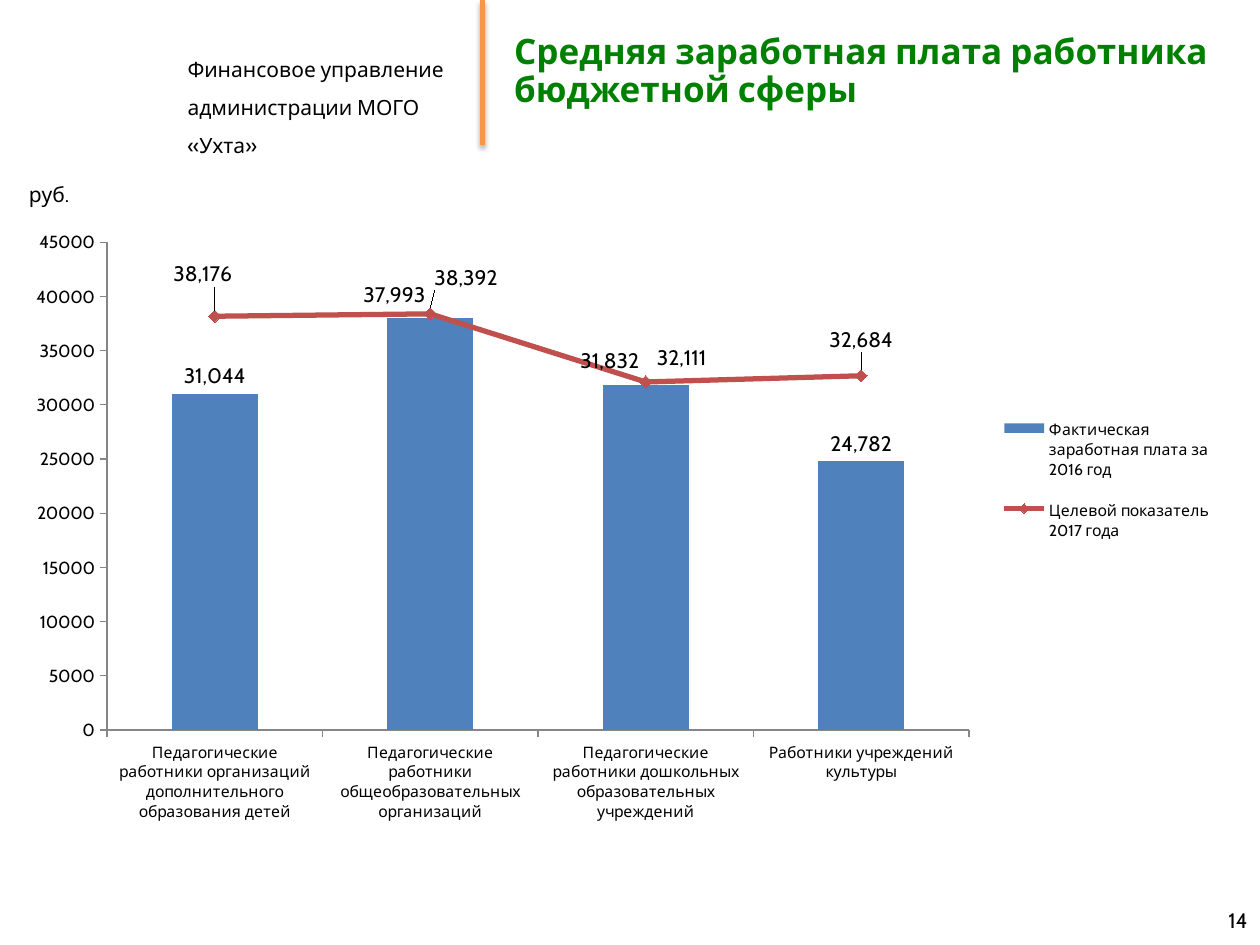
from lxml import etree
from pptx import Presentation
from pptx.chart.data import CategoryChartData as Data
from pptx.dml.color import RGBColor as RGB
from pptx.enum.chart import XL_CHART_TYPE as Kind, XL_LABEL_POSITION as Pos
from pptx.enum.chart import XL_LEGEND_POSITION as Side, XL_MARKER_STYLE as Mark
from pptx.enum.chart import XL_TICK_MARK as Tick
from pptx.enum.shapes import MSO_CONNECTOR as Link
from pptx.enum.text import MSO_ANCHOR as Anchor, MSO_AUTO_SIZE as Auto, PP_ALIGN as Align
from pptx.oxml import parse_xml
from pptx.oxml.ns import nsdecls, qn
from pptx.util import Inches, Pt

FONT = "Cabin"
BLACK = RGB(0, 0, 0)
GREEN = RGB(0, 128, 0)
ORANGE = RGB(0xF7, 0x96, 0x46)
BLUE = RGB(0x4F, 0x81, 0xBD)
RED = RGB(0xC0, 0x50, 0x4D)
GRAY = RGB(0x86, 0x86, 0x86)

CATS = [
    "Педагогические работники организаций дополнительного образования детей",
    "Педагогические работники общеобразовательных организаций",
    "Педагогические работники дошкольных образовательных учреждений",
    "Работники учреждений культуры",
]
FACT = ("Фактическая заработная плата за 2016 год", [31044, 37993, 31832, 24782])
GOAL = ("Целевой показатель 2017 года", [38176, 38392, 32111, 32684])
FACT_MOVES = {1: (-0.03, -0.01), 2: (-0.03, -0.01)}
GOAL_MOVES = {0: (-0.01, -0.03), 1: (0.03, -0.02), 2: (0.03, 0), 3: (0, -0.02)}


def style(font, size, color=BLACK, bold=False):
    font.name = FONT
    font.size = Pt(size)
    font.bold = bold
    font.color.rgb = color


def add_text(slide, box, lines, space=None, align=Align.LEFT, anchor=Anchor.TOP, wrap=True):
    frame = slide.shapes.add_textbox(*map(Inches, box)).text_frame
    frame.word_wrap = wrap
    frame.vertical_anchor = anchor
    for i, line in enumerate(lines):
        para = frame.add_paragraph() if i else frame.paragraphs[0]
        para.alignment = align
        para.line_spacing = space
        run = para.add_run()
        run.text = line
        style(run.font, 12)


def add_title(slide, box):
    title = slide.shapes.title
    title.left, title.top, title.width, title.height = map(Inches, box)
    frame = title.text_frame
    frame.word_wrap = True
    frame.auto_size = Auto.NONE
    frame.vertical_anchor = Anchor.MIDDLE
    para = frame.paragraphs[0]
    para.alignment = Align.LEFT
    para.line_spacing = 0.9
    run = para.add_run()
    run.text = "Средняя заработная плата работника бюджетной сферы"
    style(run.font, 20, GREEN, True)


def add_rule(slide, x, top, end):
    rule = slide.shapes.add_connector(Link.STRAIGHT, *map(Inches, (x, top, x, end)))
    rule.line.color.rgb = ORANGE
    rule.line.width = Pt(3)
    rule._element.spPr.append(parse_xml(
        f'<a:effectLst {nsdecls("a")}><a:outerShdw blurRad="{Pt(3.1)}" dist="{Pt(1.8)}" '
        'dir="5400000" rotWithShape="0"><a:srgbClr val="000000"><a:alpha val="35000"/>'
        '</a:srgbClr></a:outerShdw></a:effectLst>'))


def make_layout(x, y, size=None, inner=False):
    layout = etree.Element(qn("c:layout"))
    manual = etree.SubElement(layout, qn("c:manualLayout"))
    parts = [("layoutTarget", "inner")] if inner else []
    if size:
        parts += [("xMode", "edge"), ("yMode", "edge")]
    parts += [("x", x), ("y", y)]
    if size:
        parts += zip("wh", size)
    for name, val in parts:
        etree.SubElement(manual, qn("c:" + name)).set("val", str(val))
    return layout


def drop(node, tag):
    for old in node.findall(qn(tag)):
        node.remove(old)


def set_layout(node, after, layout):
    drop(node, "c:layout")
    if after is None:
        node.insert(0, layout)
    else:
        after.addnext(layout)


def split_line(chart):
    bars = chart.plots[0]._element
    line = parse_xml(
        f'<c:lineChart {nsdecls("c")}><c:grouping val="standard"/>'
        '<c:varyColors val="0"/><c:marker val="1"/></c:lineChart>')
    ser = bars.findall(qn("c:ser"))[1]
    drop(ser, "c:invertIfNegative")
    line.insert(2, ser)
    for axis in bars.findall(qn("c:axId")):
        etree.SubElement(line, qn("c:axId")).set("val", axis.get("val"))
    bars.addnext(line)


def label_series(series, place, moves):
    labels = series.data_labels
    labels.show_value = True
    labels.number_format = "#,##0"
    labels.number_format_is_linked = False
    labels.position = place
    style(labels.font, 12)
    for i, (x, y) in moves.items():
        label = series.points[i].data_label
        label.position = place
        style(label.font, 12)
        node = labels._element.findall(qn("c:dLbl"))[list(moves).index(i)]
        layout = make_layout(x, y)
        set_layout(node, node.find(qn("c:idx")), layout)
        layout.addnext(parse_xml(
            f'<c:numFmt {nsdecls("c")} formatCode="#,##0" sourceLinked="0"/>'))


def add_pay(slide, box):
    data = Data(number_format="General")
    data.categories = CATS
    data.add_series(*FACT)
    data.add_series(*GOAL)
    chart = slide.shapes.add_chart(
        Kind.COLUMN_CLUSTERED, *map(Inches, box), data).chart
    style(chart.font, 18)
    chart.has_title = False
    split_line(chart)
    bars, line = chart.plots
    bars.gap_width = 150
    bars.vary_by_categories = False
    fact, goal = bars.series[0], line.series[0]
    fact.format.fill.solid()
    fact.format.fill.fore_color.rgb = BLUE
    goal.smooth = False
    goal.format.line.color.rgb = RED
    goal.format.line.width = Pt(3)
    goal.marker.style = Mark.DIAMOND
    goal.marker.size = 7
    goal.marker.format.fill.solid()
    goal.marker.format.fill.fore_color.rgb = RED
    goal.marker.format.line.color.rgb = RED
    label_series(fact, Pos.OUTSIDE_END, FACT_MOVES)
    label_series(goal, Pos.ABOVE, GOAL_MOVES)
    for axis, size in ((chart.category_axis, 9), (chart.value_axis, 10)):
        axis.has_major_gridlines = False
        axis.major_tick_mark = Tick.OUTSIDE
        axis.minor_tick_mark = Tick.NONE
        axis.format.line.color.rgb = GRAY
        style(axis.tick_labels.font, size)
    chart.has_legend = True
    legend = chart.legend
    legend.position = Side.RIGHT
    legend.include_in_layout = False
    style(legend.font, 9)
    node = legend._element
    set_layout(node, node.find(qn("c:legendPos")), make_layout(0.8, 0.29, (0.19, 0.27)))
    area = chart._chartSpace.chart.plotArea
    set_layout(area, None, make_layout(0.06, 0.03, (0.72, 0.81), True))


def main():
    deck = Presentation()
    deck.slide_width, deck.slide_height = Inches(10), Inches(7.5)
    slide = deck.slides.add_slide(deck.slide_layouts[5])
    add_text(slide, (1.39, 0.3, 2.5, 0.66),
             ["Финансовое управление", "администрации МОГО «Ухта»"], 1.5)
    add_rule(slide, 3.83, 0, 1.15)
    add_title(slide, (3.98, 0, 6.02, 1.15))
    add_text(slide, (7.67, 7.1, 2.33, 0.4), ["14"], align=Align.RIGHT, anchor=Anchor.MIDDLE)
    add_pay(slide, (0.28, 1.78, 9.5, 4.78))
    add_text(slide, (0.13, 1.39, 0.52, 0.3), ["руб."], wrap=False)
    deck.save("out.pptx")


if __name__ == "__main__":
    main()
